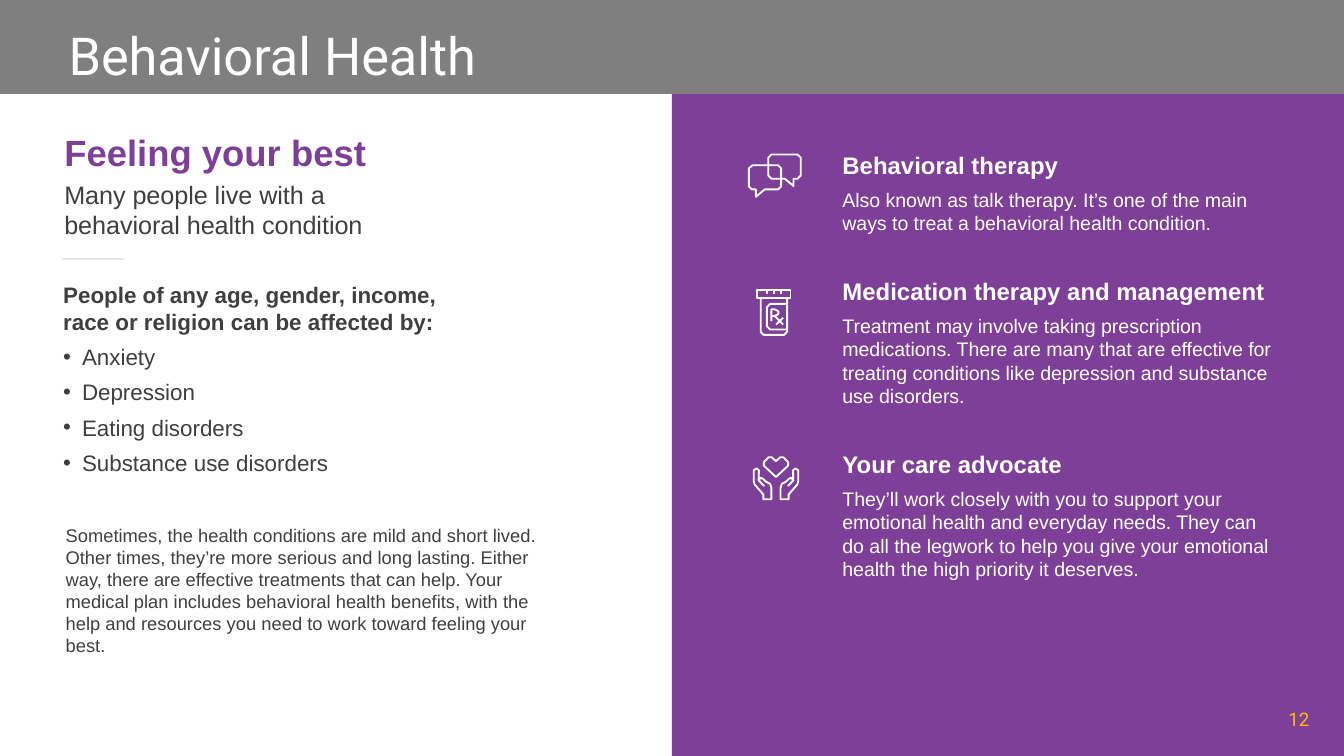
from lxml.etree import SubElement
from pptx import Presentation
from pptx.dml.color import RGBColor
from pptx.enum.shapes import MSO_CONNECTOR as Link, MSO_SHAPE as Kind
from pptx.enum.text import MSO_ANCHOR as Anchor, PP_ALIGN as Align
from pptx.oxml.ns import qn
from pptx.util import Inches, Pt

HEX = {"band": "7F7F7F", "purple": "7D3F98", "text": "3F3F3F",
       "white": "FFFFFF", "rule": "E7E6E6", "gold": "FFC000"}

TITLE = "Behavioral Health"
HEAD = "Feeling your best"
INTRO = "Many people live with a behavioral health condition"
LEAD = "People of any age, gender, income, race or religion can be affected by:"
ISSUES = ["Anxiety", "Depression", "Eating disorders", "Substance use disorders"]
NOTE = ("Sometimes, the health conditions are mild and short lived. Other times, "
        "they’re more serious and long lasting. Either way, there are effective "
        "treatments that can help. Your medical plan includes behavioral health "
        "benefits, with the help and resources you need to work toward feeling "
        "your best.")
CARE = [
    ("Behavioral therapy",
     "Also known as talk therapy. It’s one of the main ways to treat a "
     "behavioral health condition."),
    ("Medication therapy and management",
     "Treatment may involve taking prescription medications. There are many that "
     "are effective for treating conditions like depression and substance use "
     "disorders."),
    ("Your care advocate",
     "They’ll work closely with you to support your emotional health and everyday "
     "needs. They can \vdo all the legwork to help you give your emotional health "
     "the high priority it deserves."),
]

# Icon strokes: points in thousandths of an inch, and whether the stroke closes
HAND = [(5740, 3715), (5680, 3715), (5680, 3680), (5615, 3605), (5608, 3580),
        (5608, 3500), (5628, 3485), (5647, 3500), (5645, 3575), (5685, 3615),
        (5645, 3575), (5660, 3555), (5680, 3565), (5700, 3585), (5730, 3600),
        (5740, 3630)]
AXIS = 5774
CHAT = [
    ([(5600, 1230), (5790, 1230), (5813, 1253), (5813, 1387), (5790, 1410),
      (5690, 1410), (5625, 1465), (5625, 1410), (5595, 1410), (5572, 1387),
      (5572, 1253)], True),
    ([(5740, 1150), (5935, 1150), (5958, 1173), (5958, 1307), (5935, 1330),
      (5905, 1330), (5905, 1385), (5840, 1330), (5740, 1330), (5717, 1307),
      (5717, 1173)], True),
]
BOTTLE = [
    ([(5635, 2155), (5882, 2155), (5882, 2220), (5635, 2220)], True),
    ([(5660, 2220), (5660, 2470), (5682, 2492), (5835, 2492), (5857, 2470),
      (5857, 2220)], False),
    ([(5855, 2262), (5730, 2262), (5706, 2286), (5706, 2428), (5730, 2452),
      (5855, 2452)], False),
    ([(5740, 2390), (5740, 2302), (5765, 2302), (5792, 2317), (5792, 2337),
      (5765, 2352), (5740, 2352)], False),
    ([(5765, 2352), (5827, 2415)], False),
    ([(5827, 2365), (5775, 2415)], False),
] + [([(x, 2155), (x, 2187)], False) for x in range(5705, 5820, 52)]
CUPPED = [
    (HAND, True),
    ([(2 * AXIS - x, y) for x, y in HAND], True),
    ([(5774, 3550), (5684, 3465), (5684, 3440), (5718, 3403), (5743, 3403),
      (5774, 3432), (5805, 3403), (5830, 3403), (5864, 3440), (5864, 3465)], True),
]


def tint(name):
    return RGBColor.from_string(HEX[name])


def place(shape, x, y, w, h):
    shape.left, shape.top, shape.width, shape.height = map(Inches, (x, y, w, h))


def style(par, size, color, bold=False, after=0, face="Arial", align=Align.LEFT):
    par.alignment = align
    par.space_before, par.space_after = Pt(0), Pt(after)
    font = par.font
    font.name, font.size, font.bold = face, Pt(size), bold
    font.color.rgb = tint(color)


def write(frame, rows):
    """Fill a frame with paragraphs, each a text and its style values."""
    frame.word_wrap = True
    for i, (text, look) in enumerate(rows):
        par = frame.add_paragraph() if i else frame.paragraphs[0]
        par.text = text
        style(par, **look)


def add_text(slide, box, rows):
    frame = slide.shapes.add_textbox(*map(Inches, box)).text_frame
    write(frame, rows)
    return frame


def add_block(slide, box, color):
    block = slide.shapes.add_shape(Kind.RECTANGLE, *map(Inches, box))
    block.shadow.inherit = False
    block.fill.solid()
    block.fill.fore_color.rgb = tint(color)
    block.line.fill.background()
    return block


def add_icon(slide, strokes):
    """Draw all strokes of an icon as one outlined freeform."""
    (start, _), *_ = strokes
    pen = slide.shapes.build_freeform(*start[0], scale=Inches(1) / 1000)
    for i, (dots, shut) in enumerate(strokes):
        if i:
            pen.move_to(*dots[0])
        pen.add_line_segments(dots[1:], close=shut)
    icon = pen.convert_to_shape()
    icon.shadow.inherit = False
    icon.fill.background()
    icon.line.color.rgb = tint("white")
    icon.line.width = Pt(1)


def add_list(body):
    place(body, 0.47, 2.09, 3.06, 1.8)
    frame = body.text_frame
    frame.margin_left = frame.margin_right = 0
    frame.margin_top = frame.margin_bottom = 0
    item = dict(size=12, color="text", after=4.5)
    write(frame, [(LEAD, item | dict(bold=True))] + [(t, item) for t in ISSUES])
    for i, par in enumerate(frame.paragraphs):
        props = par._p.get_or_add_pPr()
        hang = Inches(0.14) if i else 0
        props.set("marL", str(hang))
        props.set("indent", str(-hang))
        if not i:
            props.find(qn("a:defRPr")).addprevious(SubElement(props, qn("a:buNone")))


def main():
    deck = Presentation()
    deck.slide_width = Inches(10)
    deck.slide_height = deck.slide_width * 9 // 16
    slide = deck.slides.add_slide(deck.slide_layouts[1])
    title, body = slide.placeholders

    band = add_block(slide, (-0.01, 0, 10.02, 0.7), "band")
    slide.shapes._spTree.insert(2, band._element)
    add_block(slide, (5, 0.7, 5, 4.93), "purple")

    place(title, 0.41, 0.12, 9, 0.58)
    title.text_frame.vertical_anchor = Anchor.MIDDLE
    write(title.text_frame, [(TITLE, dict(size=28, color="white", face="Roboto"))])
    add_list(body)

    add_text(slide, (0.38, 0.92, 2.75, 0.93), [
        (HEAD, dict(size=19.5, color="purple", bold=True, after=3)),
        (INTRO, dict(size=13.5, color="text"))])
    add_text(slide, (0.39, 3.85, 3.87, 1.09),
             [(NOTE, dict(size=9.8, color="text"))])

    top = dict(size=12.8, color="white", bold=True, after=4.5)
    low = dict(size=10.5, color="white", after=22.5)
    add_text(slide, (6.17, 1.07, 3.54, 3.37),
             [row for name, text in CARE for row in ((name, top), (text, low))])
    for strokes in (CHAT, BOTTLE, CUPPED):
        add_icon(slide, strokes)

    rule = slide.shapes.add_connector(
        Link.STRAIGHT, *map(Inches, (0.46, 1.93, 0.92, 1.93)))
    rule.line.color.rgb = tint("rule")
    rule.line.width = Pt(1)
    SubElement(rule._element.spPr, qn("a:effectLst"))

    page = add_text(slide, (7.51, 5.2, 2.33, 0.3), [
        ("12", dict(size=10, color="gold", face="Roboto", align=Align.RIGHT))])
    page.vertical_anchor = Anchor.MIDDLE
    deck.save("out.pptx")


if __name__ == "__main__":
    main()
